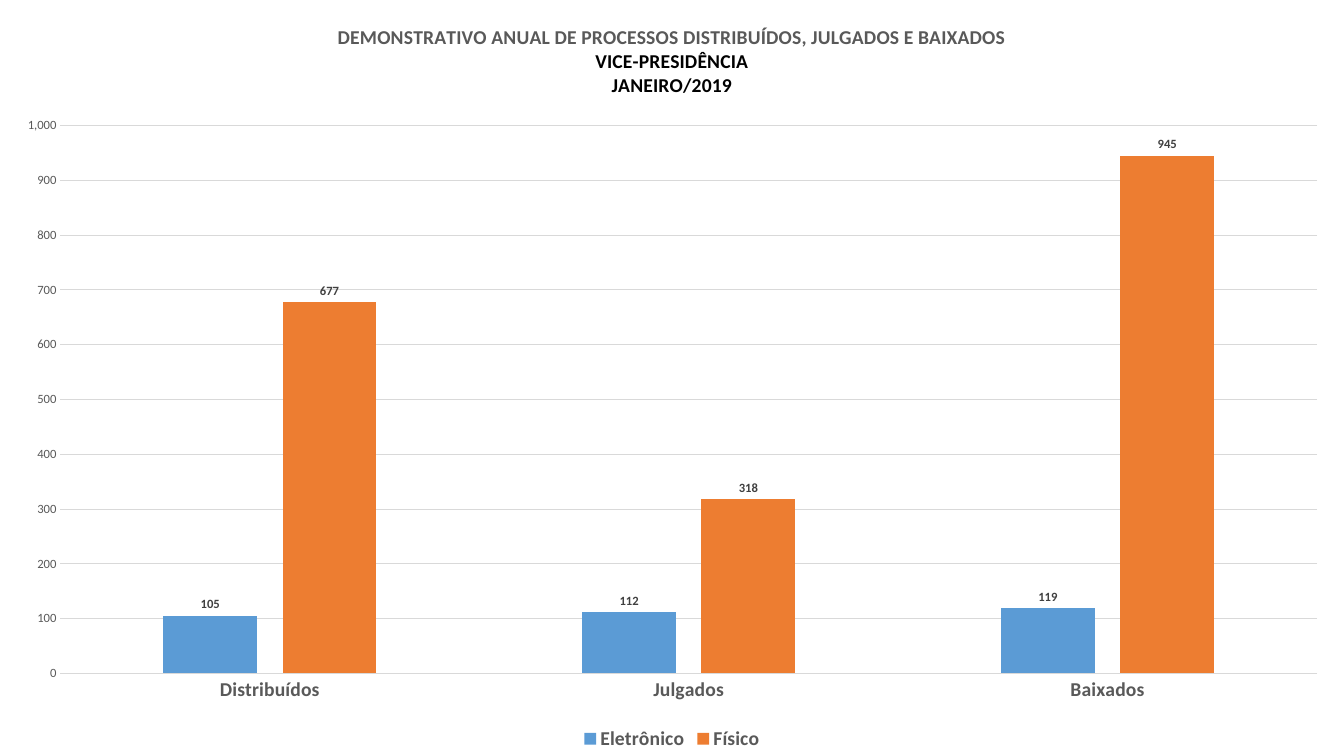
"""Build the annual column chart of cases distributed, judged and closed."""
from dataclasses import dataclass

import pptx
import pptx.chart.chart
import pptx.chart.data
import pptx.chart.series
import pptx.dml.color
import pptx.enum.chart
import pptx.enum.text
import pptx.oxml
import pptx.oxml.ns
import pptx.text.text
import pptx.util


@dataclass(frozen=True)
class Theme:
    font: str = "Calibri"
    black: str = "000000"
    gray: str = "595959"
    label: str = "404040"
    grid: str = "D9D9D9"
    base_size: float = 10
    large_size: float = 14
    small_size: float = 9
    line_width: float = 0.75


@dataclass(frozen=True)
class CaseSeries:
    name: str
    values: tuple[int, ...]
    color: str


@dataclass(frozen=True)
class TitleLine:
    text: str
    color: str


THEME = Theme()
SLIDE_WIDTH = pptx.util.Pt(960)
SLIDE_HEIGHT = pptx.util.Pt(540)
CATEGORIES = ("Distribuídos", "Julgados", "Baixados")
SERIES = (
    CaseSeries("Eletrônico", (105, 112, 119), "5B9BD5"),
    CaseSeries("Físico", (677, 318, 945), "ED7D31"),
)
TITLE_LINES = (
    TitleLine("DEMONSTRATIVO ANUAL DE PROCESSOS DISTRIBUÍDOS, JULGADOS E BAIXADOS", THEME.gray),
    TitleLine("VICE-PRESIDÊNCIA", THEME.black),
    TitleLine("JANEIRO/2019", THEME.black),
)


def rgb(color: str) -> pptx.dml.color.RGBColor:
    return pptx.dml.color.RGBColor.from_string(color)


def style_font(font: pptx.text.text.Font, size: float, color: str, bold: bool = False) -> None:
    font.name = THEME.font
    font.size = pptx.util.Pt(size)
    font.bold = bold
    font.color.rgb = rgb(color)


def style_line(line: pptx.dml.line.LineFormat) -> None:
    line.color.rgb = rgb(THEME.grid)
    line.width = pptx.util.Pt(THEME.line_width)


def make_layout(inner: bool = False, **fractions: float) -> pptx.oxml.xmlchemy.BaseOxmlElement:
    """Return a manual layout measured in fractions of the chart."""
    target = '<c:layoutTarget val="inner"/>' if inner else ""
    modes = '<c:xMode val="edge"/><c:yMode val="edge"/>'
    sizes = "".join(f'<c:{key} val="{value}"/>' for key, value in fractions.items())
    namespace = pptx.oxml.ns.nsdecls("c")
    return pptx.oxml.parse_xml(
        f"<c:layout {namespace}><c:manualLayout>{target}{modes}{sizes}</c:manualLayout></c:layout>"
    )


def remove_layout(element: pptx.oxml.xmlchemy.BaseOxmlElement) -> None:
    for layout in element.findall(pptx.oxml.ns.qn("c:layout")):
        element.remove(layout)


def add_title(chart: pptx.chart.chart.Chart) -> None:
    chart.has_title = True
    frame = chart.chart_title.text_frame
    chart.chart_title.include_in_layout = False
    for index, line in enumerate(TITLE_LINES):
        paragraph = frame.add_paragraph() if index else frame.paragraphs[0]
        paragraph.alignment = pptx.enum.text.PP_ALIGN.CENTER
        run = paragraph.add_run()
        run.text = line.text
        style_font(run.font, THEME.large_size, line.color, True)


def style_axes(chart: pptx.chart.chart.Chart) -> None:
    category_axis, value_axis = chart.category_axis, chart.value_axis
    for axis in (category_axis, value_axis):
        axis.major_tick_mark = pptx.enum.chart.XL_TICK_MARK.NONE
        axis.minor_tick_mark = pptx.enum.chart.XL_TICK_MARK.NONE
    style_font(category_axis.tick_labels.font, THEME.large_size, THEME.gray, True)
    style_line(category_axis.format.line)
    style_font(value_axis.tick_labels.font, THEME.small_size, THEME.gray)
    value_axis.format.line.fill.background()
    value_axis.minimum_scale = 0
    value_axis.maximum_scale = 1000
    value_axis.major_unit = 100
    value_axis.has_major_gridlines = True
    style_line(value_axis.major_gridlines.format.line)
    value_axis.tick_labels.number_format = "#,##0"
    value_axis.tick_labels.number_format_is_linked = False


def style_series(series: pptx.chart.series.BarSeries, color: str) -> None:
    series.format.fill.solid()
    series.format.fill.fore_color.rgb = rgb(color)
    series.invert_if_negative = False
    labels = series.data_labels
    labels.show_value = True
    labels.position = pptx.enum.chart.XL_LABEL_POSITION.OUTSIDE_END
    style_font(labels.font, THEME.small_size, THEME.label, True)


def add_legend(chart: pptx.chart.chart.Chart) -> None:
    chart.has_legend = True
    legend = chart.legend
    legend.position = pptx.enum.chart.XL_LEGEND_POSITION.BOTTOM
    legend.include_in_layout = False
    style_font(legend.font, THEME.large_size, THEME.gray, True)
    element = legend._element
    remove_layout(element)
    element.find(pptx.oxml.ns.qn("c:legendPos")).addnext(make_layout(x=0.43, y=0.96))


def main() -> None:
    presentation = pptx.Presentation()
    presentation.slide_width = SLIDE_WIDTH
    presentation.slide_height = SLIDE_HEIGHT
    slide = presentation.slides.add_slide(presentation.slide_layouts.get_by_name("Blank"))
    chart_data = pptx.chart.data.CategoryChartData()
    chart_data.categories = CATEGORIES
    for entry in SERIES:
        chart_data.add_series(entry.name, entry.values)
    chart = slide.shapes.add_chart(
        pptx.enum.chart.XL_CHART_TYPE.COLUMN_CLUSTERED,
        pptx.util.Pt(0), pptx.util.Pt(0), SLIDE_WIDTH, SLIDE_HEIGHT, chart_data,
    ).chart
    style_font(chart.font, THEME.base_size, THEME.black)
    add_title(chart)
    style_axes(chart)
    add_legend(chart)
    plot = chart.plots[0]
    plot.gap_width = 219
    plot.overlap = -27
    plot.vary_by_categories = False
    for series, entry in zip(plot.series, SERIES):
        style_series(series, entry.color)
    plot_area = chart._chartSpace.chart.plotArea
    remove_layout(plot_area)
    plot_area.insert(0, make_layout(inner=True, x=0.045, y=0.166, w=0.935, h=0.725))
    presentation.save("out.pptx")


if __name__ == "__main__":
    main()
